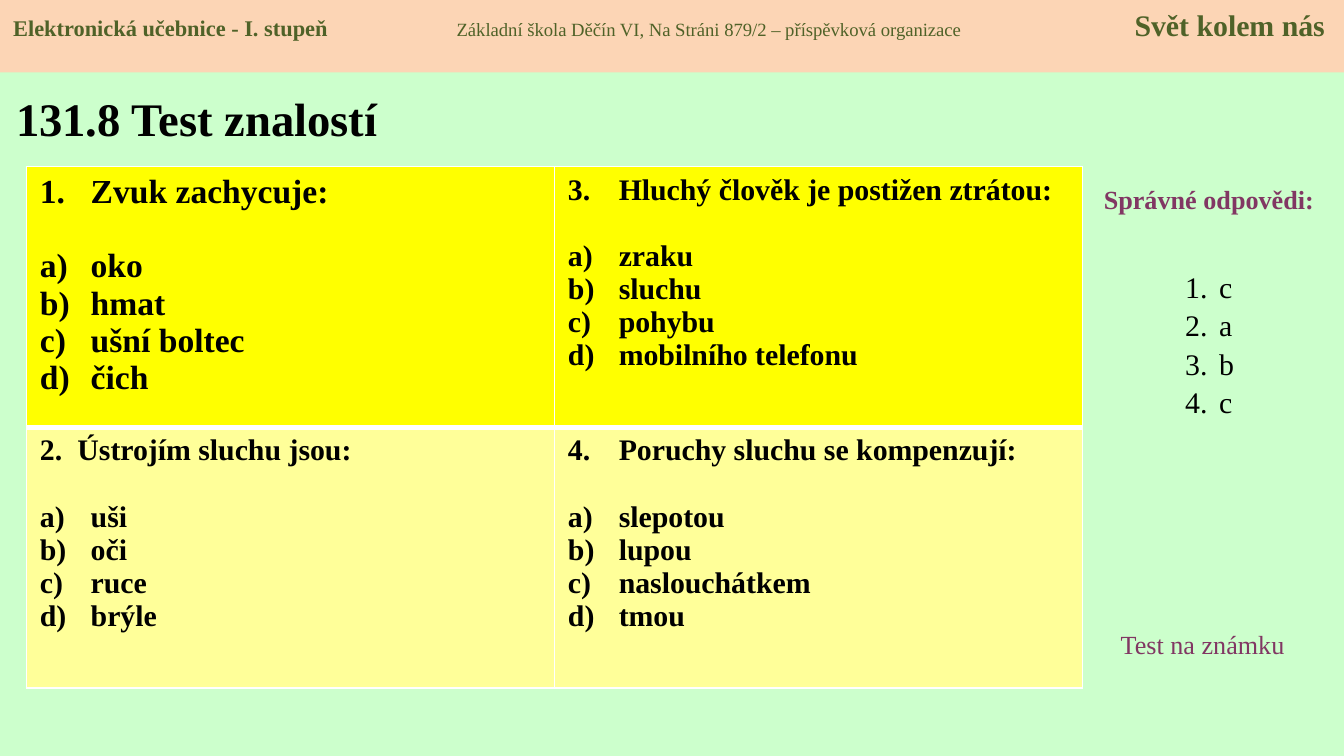
from lxml.etree import SubElement
from pptx import Presentation
from pptx.dml.color import RGBColor
from pptx.enum.shapes import MSO_SHAPE as SHAPE
from pptx.enum.text import MSO_ANCHOR as ANCHOR, PP_ALIGN as ALIGN
from pptx.oxml.ns import qn
from pptx.util import Cm, Pt

FONT = "Times New Roman"
COLORS = {
    "background": "CCFFCC", "header": "FCD5B5", "header_text": "4F6228",
    "text": "000000", "accent": "813763", "border": "FFFFFF",
    "row_1": "FFFF00", "row_2": "FFFF99",
}
# Row by row: number, size, number indent in cm, question, options
QUESTIONS = [
    [(1, 18, 0.96, "Zvuk zachycuje:", ["oko", "hmat", "ušní boltec", "čich"]),
     (3, 16, 0.96, "Hluchý člověk je postižen ztrátou:",
      ["zraku", "sluchu", "pohybu", "mobilního telefonu"])],
    [(2, 16, 0.71, "Ústrojím sluchu jsou:", ["uši", "oči", "ruce", "brýle"]),
     (4, 16, 0.96, "Poruchy sluchu se kompenzují:",
      ["slepotou", "lupou", "naslouchátkem", "tmou"])],
]
ANSWERS = ["c", "a", "b", "c"]


def rgb(name):
    return RGBColor.from_string(COLORS[name])


def set_font(target, size, color="text", bold=False):
    font = target.font
    font.name, font.size, font.bold = FONT, Pt(size), bold
    font.color.rgb = rgb(color)


def add_number(p, kind, indent, start=1):
    pPr = p._p.get_or_add_pPr()
    pPr.set("marL", str(Cm(indent)))
    pPr.set("indent", str(-Cm(indent)))
    bullet = SubElement(pPr, qn("a:buAutoNum"), type=kind)
    if start > 1:
        bullet.set("startAt", str(start))


def add_tabs(p, stops):
    tabs = SubElement(p._p.get_or_add_pPr(), qn("a:tabLst"))
    for pos, align in stops:
        SubElement(tabs, qn("a:tab"), pos=str(Cm(pos)), algn=align)


def next_paragraph(tf, i):
    return tf.add_paragraph() if i else tf.paragraphs[0]


def add_text_box(slide, x, y, w, h):
    tf = slide.shapes.add_textbox(Cm(x), Cm(y), Cm(w), Cm(h)).text_frame
    tf.word_wrap = True
    return tf


def add_label(slide, text, x, y, w, h, bold=False, align=ALIGN.LEFT):
    p = add_text_box(slide, x, y, w, h).paragraphs[0]
    p.text, p.alignment = text, align
    set_font(p, 14, "accent", bold)


def add_title(slide, text):
    title = slide.shapes.title
    title.left, title.top, title.width, title.height = Cm(0.05), Cm(1.4), Cm(8.1), Cm(1.65)
    tf = title.text_frame
    tf.vertical_anchor = ANCHOR.MIDDLE
    p = tf.paragraphs[0]
    p.text, p.alignment = text, ALIGN.LEFT
    set_font(p, 25, bold=True)


def set_borders(cell, widths):
    tcPr = cell._tc.get_or_add_tcPr()
    for side, width in zip("LRTB", widths):
        ln = SubElement(tcPr, qn(f"a:ln{side}"), w=str(Pt(width)))
        fill = SubElement(ln, qn("a:solidFill"))
        SubElement(fill, qn("a:srgbClr"), val=COLORS["border"])


def fill_question(cell, number, size, indent, question, options):
    tf = cell.text_frame
    for i, text in enumerate([question, *options]):
        p = next_paragraph(tf, i)
        p.text = text
        if i:
            add_number(p, "alphaLcParenR", 0.96)
        else:
            p.space_after = Pt(size * 1.11)
            add_number(p, "arabicPeriod", indent, number)
        set_font(p, size, bold=True)


def add_question_table(slide):
    table = slide.shapes.add_table(2, 2, Cm(0.5), Cm(3.15), Cm(19.96), Cm(9.86)).table
    for r, row in enumerate(QUESTIONS):
        for c, question in enumerate(row):
            cell = table.cell(r, c)
            fill_question(cell, *question)
            # Thick line between the two rows
            set_borders(cell, (1, 1, 3, 1) if r else (1, 1, 1, 3))
            cell.fill.solid()
            cell.fill.fore_color.rgb = rgb(f"row_{r + 1}")


def add_answers(slide):
    tf = add_text_box(slide, 22.15, 4.19, 1.4, 5.05)
    tf.margin_top = Cm(0.89)
    for i, answer in enumerate(ANSWERS):
        p = next_paragraph(tf, i)
        p.text = answer
        if i:
            p.space_before = Pt(1.3)
        add_number(p, "arabicPeriod", 0.64)
        set_font(p, 16)


def add_header(slide):
    sp = slide.shapes.add_shape(SHAPE.RECTANGLE, 0, 0, Cm(25.4), Cm(1.37))
    sp.shadow.inherit = False
    sp.fill.solid()
    sp.fill.fore_color.rgb = rgb("header")
    sp.line.fill.background()
    tf = sp.text_frame
    tf.vertical_anchor = ANCHOR.TOP
    p = tf.paragraphs[0]
    p.alignment = ALIGN.LEFT
    add_tabs(p, [(8.38, "l"), (24.79, "r")])
    for text, size, bold in [
        ("Elektronická učebnice - I. stupeň\t", 12, True),
        ("Základní škola Děčín VI, Na Stráni 879/2 – příspěvková organizace\t", 10, False),
        ("Svět kolem nás", 16, True),
    ]:
        r = p.add_run()
        r.text = text
        set_font(r, size, "header_text", bold)


def main():
    prs = Presentation()
    prs.slide_width, prs.slide_height = Cm(25.4), Cm(14.29)
    slide = prs.slides.add_slide(prs.slide_layouts[5])
    slide.background.fill.solid()
    slide.background.fill.fore_color.rgb = rgb("background")

    # Title and questions
    add_title(slide, "131.8 Test znalostí")
    add_question_table(slide)

    # Answer column
    add_label(slide, "Správné odpovědi:", 20.45, 3.35, 4.8, 0.86, True, ALIGN.CENTER)
    add_answers(slide)
    add_label(slide, "Test na známku", 20.93, 11.76, 3.99, 0.86)

    # Header band
    add_header(slide)
    prs.save("out.pptx")


if __name__ == "__main__":
    main()
